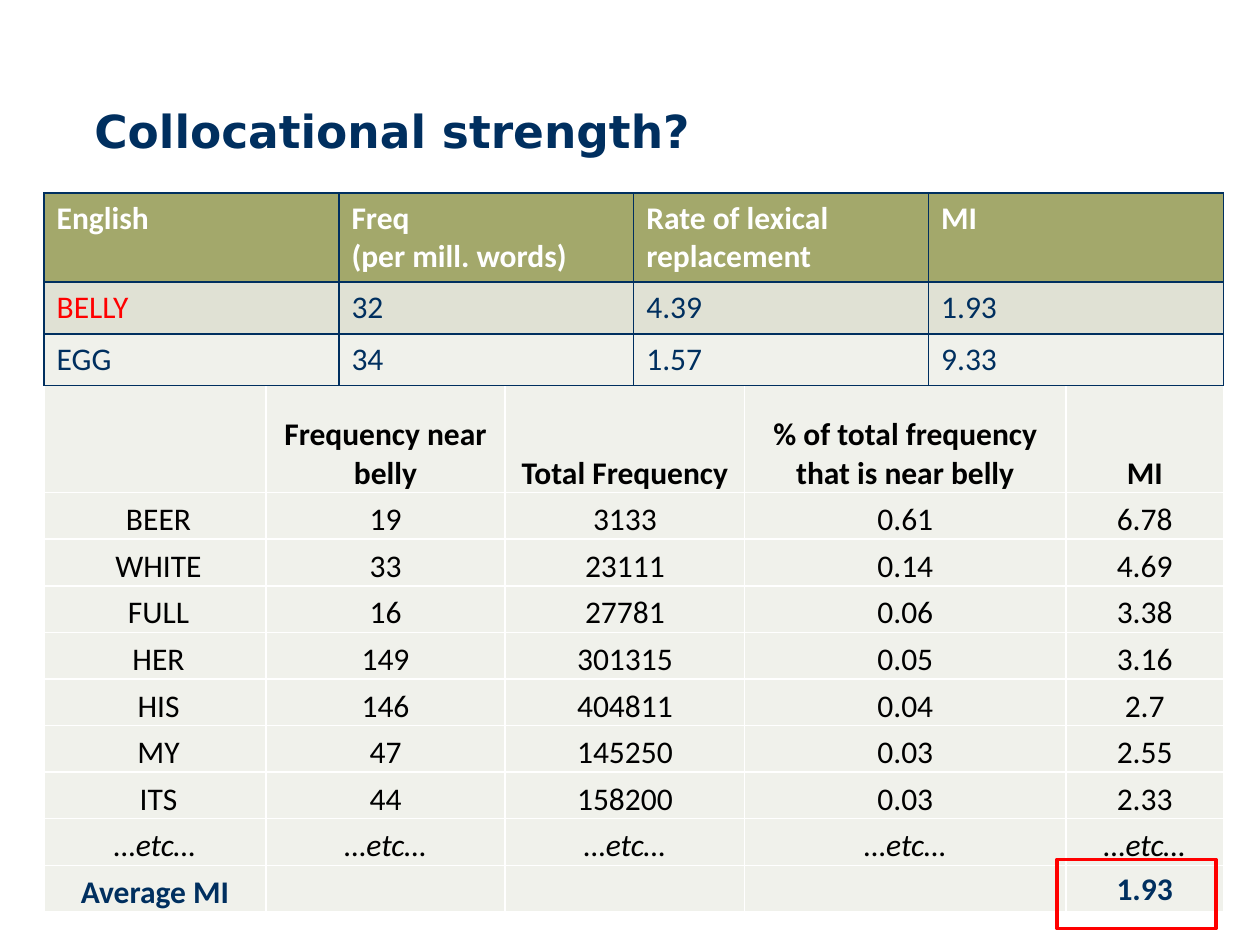
from lxml.etree import SubElement
from pptx import Presentation
from pptx.dml.color import RGBColor
from pptx.enum.shapes import MSO_SHAPE as Shape
from pptx.enum.text import MSO_ANCHOR as Anchor, PP_ALIGN as Align
from pptx.oxml.ns import qn
from pptx.util import Inches, Pt

NAVY = RGBColor(0x00, 0x2F, 0x5F)
OLIVE = RGBColor(0xA3, 0xA8, 0x6B)
BAND = RGBColor(0xE0, 0xE1, 0xD4)
PALE = RGBColor(0xF0, 0xF1, 0xEB)
RED = RGBColor(0xFF, 0x00, 0x00)
WHITE = RGBColor(0xFF, 0xFF, 0xFF)
BLACK = RGBColor(0x00, 0x00, 0x00)


def add_grid(slide, rows, top, widths, heights):
    """Add a table at the shared left edge and size its columns and rows."""
    frame = slide.shapes.add_table(len(rows), len(widths), Inches(0.35), Inches(top),
                                   Inches(sum(widths)), Inches(sum(heights)))
    for column, width in zip(frame.table.columns, widths):
        column.width = Inches(width)
    for row, height in zip(frame.table.rows, heights):
        row.height = Inches(height)
    return frame.table


def fill_cell(cell, text, fill, border, color, bold=False, italic=False, align=Align.LEFT):
    """Write one cell with its fill and a 1 pt border on all four sides."""
    para = cell.text_frame.paragraphs[0]
    para.text = text
    para.alignment = align
    for span in para.runs:
        formats = {"name": "Calibri", "size": Pt(18), "bold": bold, "italic": italic}
        for name, value in formats.items():
            setattr(span.font, name, value)
        span.font.color.rgb = color
    properties = cell._tc.get_or_add_tcPr()
    for side in ("a:lnL", "a:lnR", "a:lnT", "a:lnB"):
        line = SubElement(properties, qn(side), w=str(Pt(1)))
        solid = SubElement(line, qn("a:solidFill"))
        SubElement(solid, qn("a:srgbClr"), val=str(border))
    cell.fill.solid()
    cell.fill.fore_color.rgb = fill


deck = Presentation()
deck.slide_width, deck.slide_height = Inches(10), Inches(7.5)
slide = deck.slides.add_slide(deck.slide_layouts[6])

# Title
title = slide.shapes.add_textbox(Inches(0.65), Inches(0.43), Inches(8.69), Inches(0.87))
title.text_frame.word_wrap = True
title.text_frame.vertical_anchor = Anchor.BOTTOM
span = title.text_frame.paragraphs[0].add_run()
span.text = "Collocational strength?"
for name, value in {"name": "DejaVu Sans", "size": Pt(26), "bold": True}.items():
    setattr(span.font, name, value)
span.font.color.rgb = NAVY

# Collocates of "belly"
collocates = [
    ("", "Frequency near belly", "Total Frequency",
     "% of total frequency that is near belly", "MI"),
    (" BEER", "19", "3133", "0.61", "6.78"),
    (" WHITE", "33", "23111", "0.14", "4.69"),
    (" FULL", "16", "27781", "0.06", "3.38"),
    (" HER", "149", "301315", "0.05", "3.16"),
    (" HIS", "146", "404811", "0.04", "2.7"),
    (" MY", "47", "145250", "0.03", "2.55"),
    (" ITS", "44", "158200", "0.03", "2.33"),
    ("…etc…",) * 5,
    ("Average MI", "", "", "", "1.93"),
]
last = len(collocates) - 1
table = add_grid(slide, collocates, 2.88, [1.76, 1.9, 1.9, 2.55, 1.25], [1.03] + [0.37] * last)
cell_format = {"margin_left": Inches(0.01), "margin_right": Inches(0.01),
               "margin_top": Inches(0.01), "margin_bottom": 0,
               "vertical_anchor": Anchor.BOTTOM}
for r, row in enumerate(collocates):
    for c, text in enumerate(row):
        cell = table.cell(r, c)
        fill_cell(cell, text, PALE, WHITE, NAVY if r == last else BLACK,
                  bold=r in (0, last), italic=r == last - 1, align=Align.CENTER)
        for name, value in cell_format.items():
            setattr(cell, name, value)
table.cell(last, 4).vertical_anchor = Anchor.MIDDLE

# Frame around the average
highlight = slide.shapes.add_shape(Shape.RECTANGLE, Inches(8.39), Inches(6.82),
                                   Inches(1.26), Inches(0.55))
highlight.shadow.inherit = False
highlight.fill.background()
highlight.line.color.rgb = RED
highlight.line.width = Pt(2)

# Comparison of the two words
words = [
    ("English", "Freq\n(per mill. words)", "Rate of lexical replacement", "MI"),
    ("BELLY", "32", "4.39", "1.93"),
    ("EGG", "34", "1.57", "9.33"),
]
table = add_grid(slide, words, 1.53, [2.34] * 4, [0.71, 0.41, 0.41])
for r, (row, fill) in enumerate(zip(words, (OLIVE, BAND, PALE))):
    for c, text in enumerate(row):
        color = WHITE if r == 0 else RED if text == "BELLY" else NAVY
        fill_cell(table.cell(r, c), text, fill, NAVY, color, bold=r == 0)

deck.save("out.pptx")
